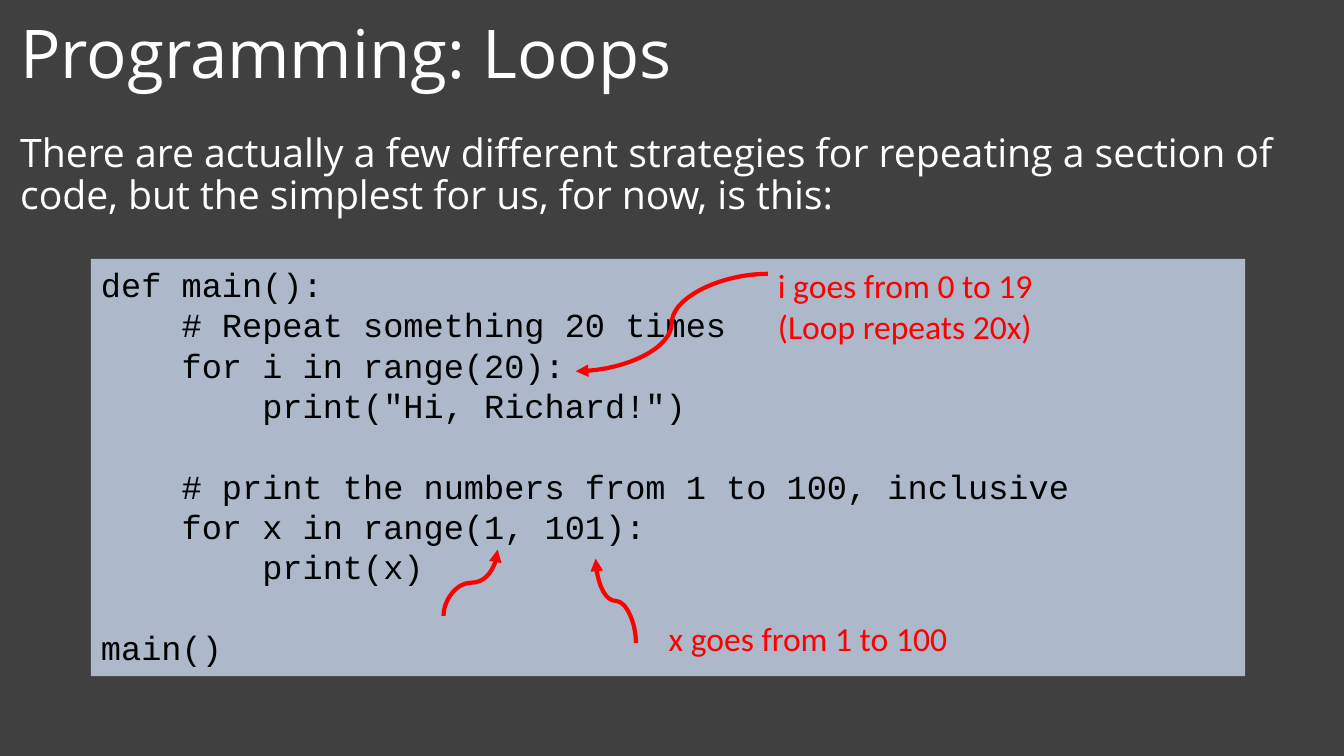
from lxml import etree
from pptx import Presentation
from pptx.dml.color import RGBColor
from pptx.enum.shapes import MSO_CONNECTOR, MSO_SHAPE
from pptx.enum.text import MSO_ANCHOR, PP_ALIGN
from pptx.oxml.ns import qn
from pptx.util import Pt

CURVE = MSO_CONNECTOR.CURVE
RECTANGLE = MSO_SHAPE.RECTANGLE
TOP, MIDDLE = MSO_ANCHOR.TOP, MSO_ANCHOR.MIDDLE
LEFT = PP_ALIGN.LEFT

CHARCOAL = RGBColor(0x40, 0x40, 0x40)
WHITE = RGBColor(0xFF, 0xFF, 0xFF)
BLACK = RGBColor(0x00, 0x00, 0x00)
BLUE_GRAY = RGBColor(0xAD, 0xB9, 0xCA)
RED = RGBColor(0xFF, 0x00, 0x00)

SLIDE_WIDTH, SLIDE_HEIGHT = 960, 540
HEADING_INSET = 14.4

CODE = '''def main():
    # Repeat something 20 times
    for i in range(20):
        print("Hi, Richard!")

    # print the numbers from 1 to 100, inclusive
    for x in range(1, 101):
        print(x)

main()'''


def write(frame, text, font, size, color, anchor=TOP, line_spacing=None):
    frame.word_wrap = True
    frame.vertical_anchor = anchor
    for i, line in enumerate(text.split("\n")):
        paragraph = frame.add_paragraph() if i else frame.paragraphs[0]
        paragraph.text = line
        paragraph.alignment = LEFT
        paragraph.line_spacing = line_spacing
        paragraph.font.name = font
        paragraph.font.size = Pt(size)
        paragraph.font.color.rgb = color


def add_heading(slide, top, height, text, size, anchor):
    box = slide.shapes.add_textbox(0, Pt(top), Pt(SLIDE_WIDTH), Pt(height))
    frame = box.text_frame
    frame.margin_left = frame.margin_right = Pt(HEADING_INSET)
    frame.margin_top = frame.margin_bottom = Pt(HEADING_INSET)
    write(frame, text, "Open Sans", size, WHITE, anchor, 0.9)


def add_code(slide, left, top, width, height, text):
    panel = slide.shapes.add_shape(RECTANGLE, Pt(left), Pt(top), Pt(width), Pt(height))
    panel.shadow.inherit = False
    panel.fill.solid()
    panel.fill.fore_color.rgb = BLUE_GRAY
    panel.line.fill.background()
    write(panel.text_frame, text, "Courier New", 24, BLACK)


def add_note(slide, left, top, width, height, text):
    note = slide.shapes.add_textbox(Pt(left), Pt(top), Pt(width), Pt(height))
    write(note.text_frame, text, "Calibri", 24, RED)


def add_curved_arrow(slide, start, end, upright=False):
    """Curve from start to end; an upright one leaves and arrives vertically."""
    (x1, y1), (x2, y2) = start, end
    if upright:
        # Turn the end points back a quarter; the rotation restores them
        cx, cy = (x1 + x2) / 2, (y1 + y2) / 2
        dx, dy = x1 - cx, y1 - cy
        x1, y1, x2, y2 = cx + dy, cy - dx, cx - dy, cy + dx
    arrow = slide.shapes.add_connector(CURVE, Pt(x1), Pt(y1), Pt(x2), Pt(y2))
    if upright:
        arrow.rotation = 90
    arrow.line.color.rgb = RED
    arrow.line.width = Pt(3)
    properties = arrow._element.spPr
    etree.SubElement(properties.find(qn("a:ln")), qn("a:tailEnd"), type="triangle")
    etree.SubElement(properties, qn("a:effectLst"))


def main():
    deck = Presentation()
    deck.slide_width, deck.slide_height = Pt(SLIDE_WIDTH), Pt(SLIDE_HEIGHT)
    slide = deck.slides.add_slide(deck.slide_layouts[6])
    slide.background.fill.solid()
    slide.background.fill.fore_color.rgb = CHARCOAL

    # Title and introduction
    add_heading(slide, 0, 81, "Programming: Loops", 48, MIDDLE)
    add_heading(slide, 81, 90,
                "There are actually a few different strategies for repeating a section "
                "of code, but the simplest for us, for now, is this:", 28, TOP)

    # Code panel
    add_code(slide, 65, 185, 824.4, 298, CODE)

    # Arrows to the range arguments
    add_curved_arrow(slide, (548.6, 195.6), (411.3, 265.2))
    add_curved_arrow(slide, (316.8, 440), (355.5, 392.6), upright=True)
    add_curved_arrow(slide, (454.3, 459.4), (425.5, 399), upright=True)

    # Notes on the loop counters
    add_note(slide, 548.6, 186, 209.5, 65.4, "i goes from 0 to 19\n(Loop repeats 20x)")
    add_note(slide, 470.6, 437.5, 222, 36.4, "x goes from 1 to 100")

    deck.save("out.pptx")


if __name__ == "__main__":
    main()
